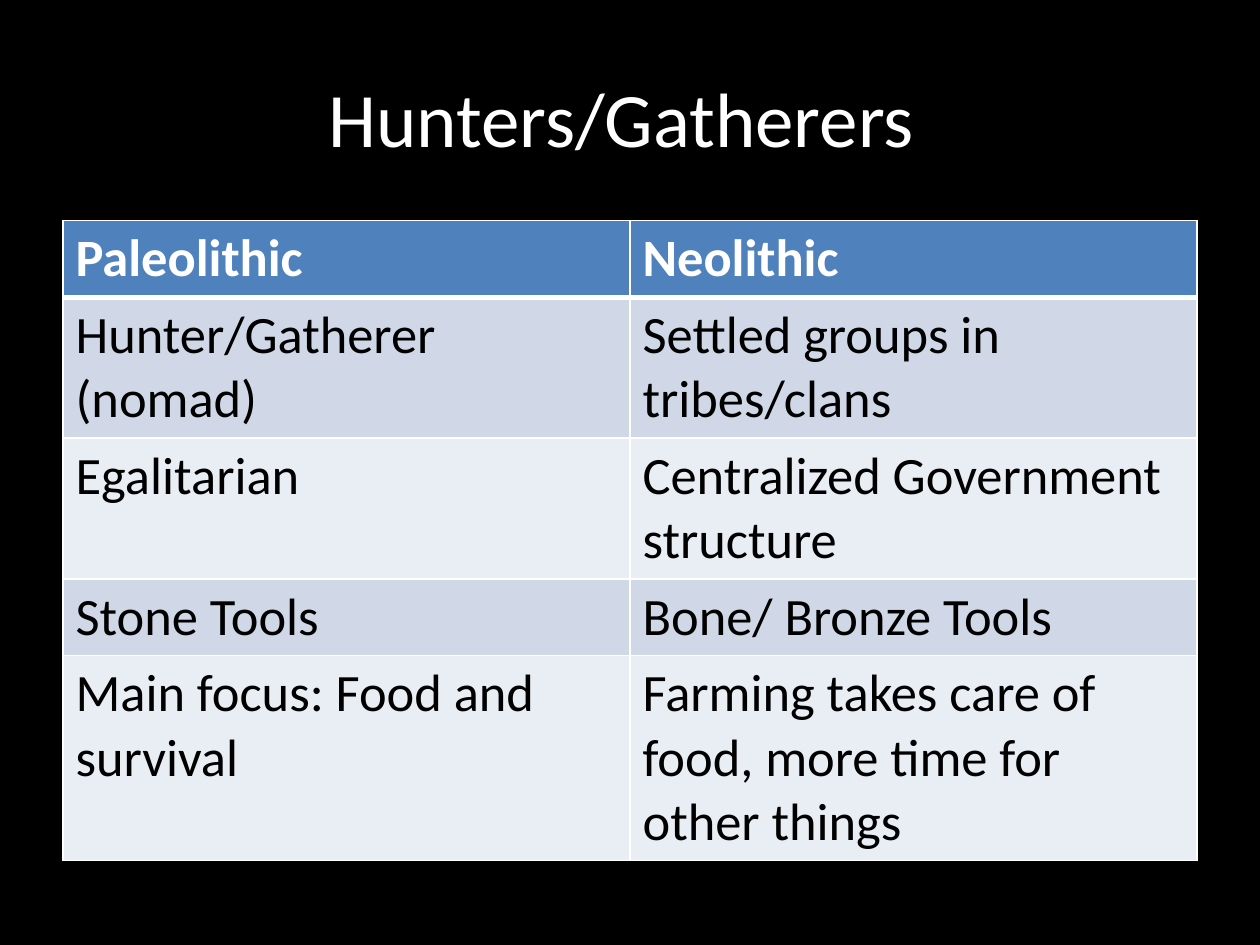
import dataclasses

import pptx
import pptx.dml.color
import pptx.enum.text
import pptx.oxml.ns
import pptx.util
from lxml import etree

TITLE_ONLY = 5


@dataclasses.dataclass(frozen=True)
class Theme:
    font: str = "Calibri"
    title_size: int = 44
    cell_size: int = 30
    background: str = "000000"
    light_text: str = "FFFFFF"
    dark_text: str = "000000"
    header: str = "4F81BD"
    bands: tuple = ("D0D8E8", "E9EDF4")
    border: str = "FFFFFF"
    thin: int = 1
    thick: int = 3


def rgb(value):
    return pptx.dml.color.RGBColor.from_string(value)


def write(tf, text, *, font, size, color, bold=False, align=None):
    """Fill a text frame; each line of text becomes a paragraph."""
    tf.text = text
    for p in tf.paragraphs:
        p.alignment = align
        for r in p.runs:
            r.font.name = font
            r.font.size = pptx.util.Pt(size)
            r.font.bold = bold
            r.font.color.rgb = rgb(color)


def set_border(cell, side, color, width):
    """Draw one side (L, R, T or B); call in that order, before the fill."""
    qn = pptx.oxml.ns.qn
    ln = etree.SubElement(cell._tc.get_or_add_tcPr(), qn(f"a:ln{side}"),
                          w=str(pptx.util.Pt(width)))
    fill = etree.SubElement(ln, qn("a:solidFill"))
    etree.SubElement(fill, qn("a:srgbClr"), val=color)


class SlideBuilder:
    def __init__(self, prs, theme):
        self.prs = prs
        self.theme = theme
        self.slide = prs.slides.add_slide(prs.slide_layouts[TITLE_ONLY])
        fill = self.slide.background.fill
        fill.solid()
        fill.fore_color.rgb = rgb(theme.background)

    def box(self, left, top, width, height):
        """Turn shares of the slide's size into lengths."""
        w, h = self.prs.slide_width, self.prs.slide_height
        return [round(v) for v in (left * w, top * h, width * w, height * h)]

    def title(self, text, *shares):
        sp = self.slide.shapes.title
        sp.left, sp.top, sp.width, sp.height = self.box(*shares)
        sp.text_frame.vertical_anchor = pptx.enum.text.MSO_ANCHOR.MIDDLE
        write(sp.text_frame, text, font=self.theme.font,
              size=self.theme.title_size, color=self.theme.light_text,
              align=pptx.enum.text.PP_ALIGN.CENTER)

    def table(self, rows, *shares):
        shape = self.slide.shapes.add_table(
            len(rows), len(rows[0]), *self.box(*shares))
        for i, row in enumerate(rows):
            for j, text in enumerate(row):
                self.cell(shape.table.cell(i, j), text, i)

    def cell(self, cell, text, row):
        theme = self.theme
        is_header = row == 0
        top = theme.thick if row == 1 else theme.thin
        bottom = theme.thick if is_header else theme.thin
        for side, width in zip("LRTB", (theme.thin, theme.thin, top, bottom)):
            set_border(cell, side, theme.border, width)
        cell.fill.solid()
        cell.fill.fore_color.rgb = rgb(
            theme.header if is_header else theme.bands[(row - 1) % 2])
        write(cell.text_frame, text, font=theme.font, size=theme.cell_size,
              color=theme.light_text if is_header else theme.dark_text,
              bold=is_header)


def main():
    prs = pptx.Presentation()
    prs.slide_width = pptx.util.Inches(10)
    prs.slide_height = pptx.util.Inches(7.5)
    s = SlideBuilder(prs, Theme())
    s.title("Hunters/Gatherers ", 0.05, 0.04, 0.9, 1 / 6)
    # Rows start low and grow to fit their text.
    s.table([
        ("Paleolithic", "Neolithic"),
        ("Hunter/Gatherer\n(nomad)", "Settled groups in tribes/clans"),
        ("Egalitarian", "Centralized Government structure"),
        ("Stone Tools", "Bone/ Bronze Tools"),
        ("Main focus: Food and survival",
         "Farming takes care of food, more time for other things"),
    ], 0.05, 7 / 30, 0.9, 0.27)
    prs.save("out.pptx")


if __name__ == "__main__":
    main()
